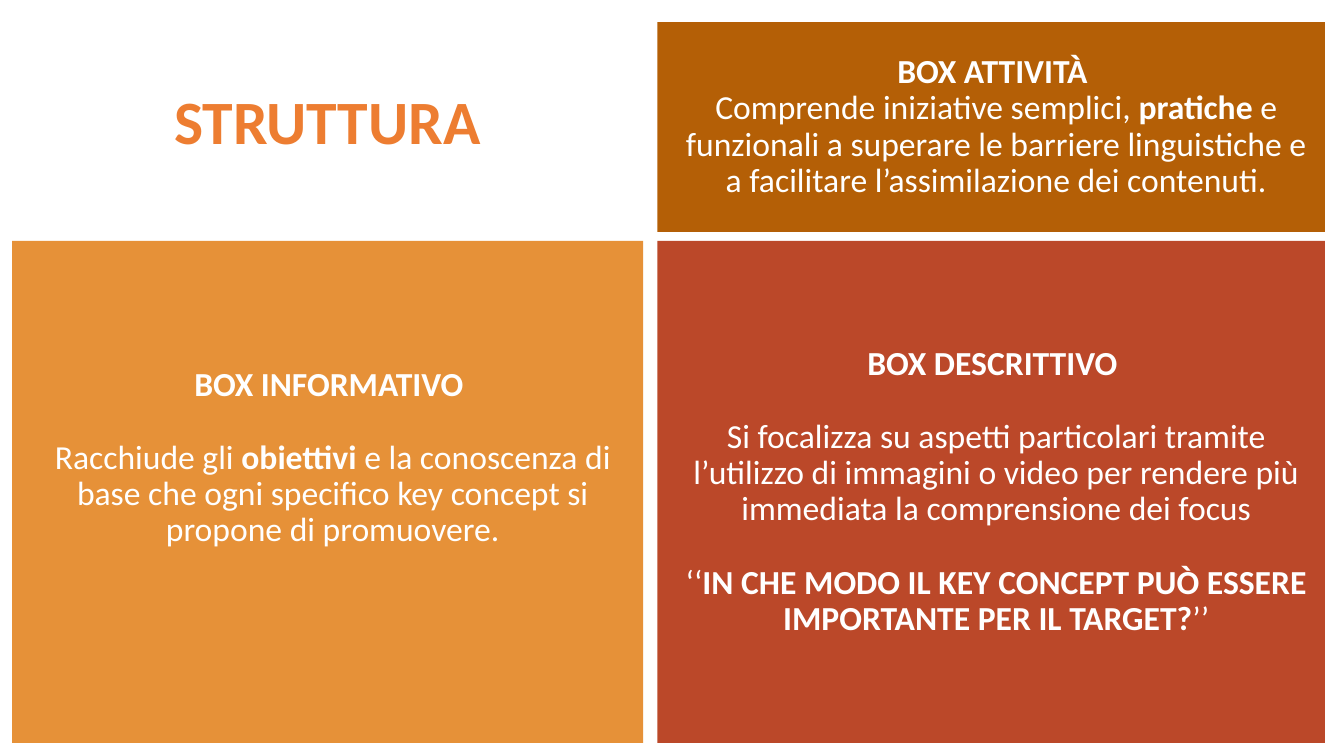
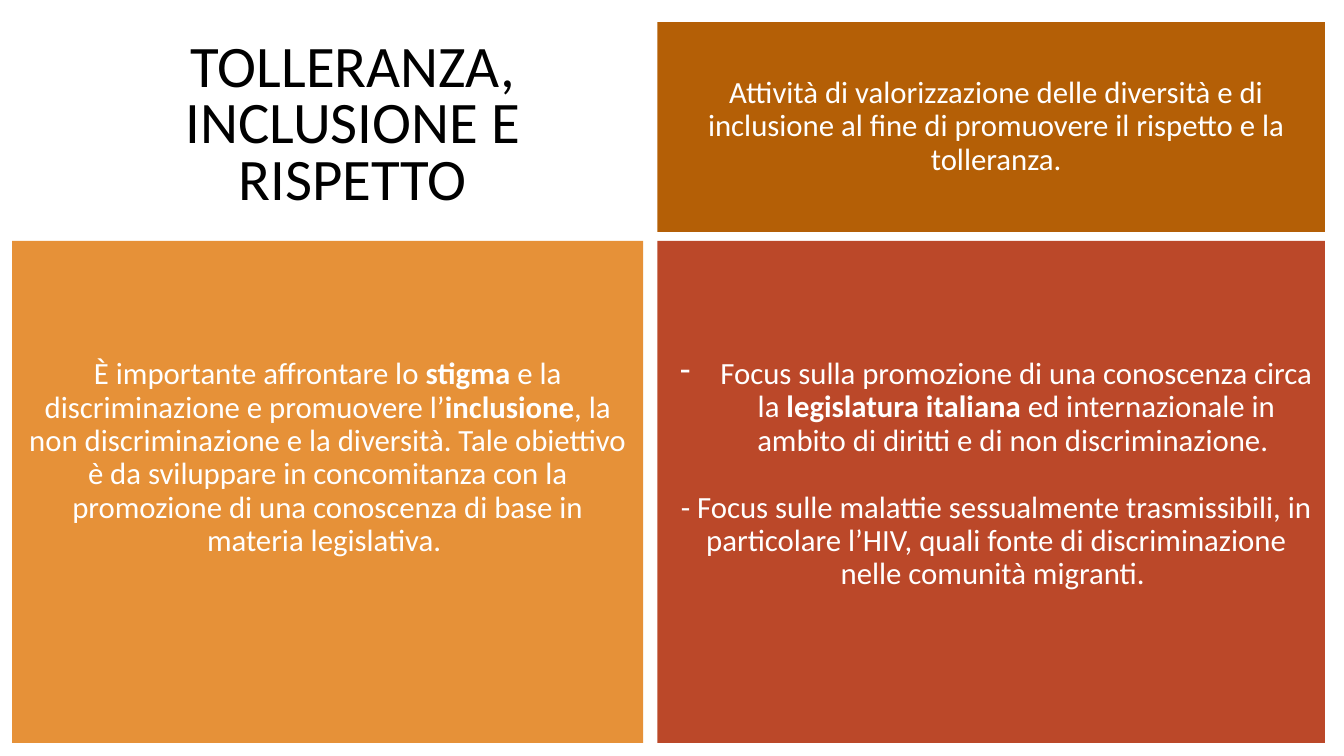
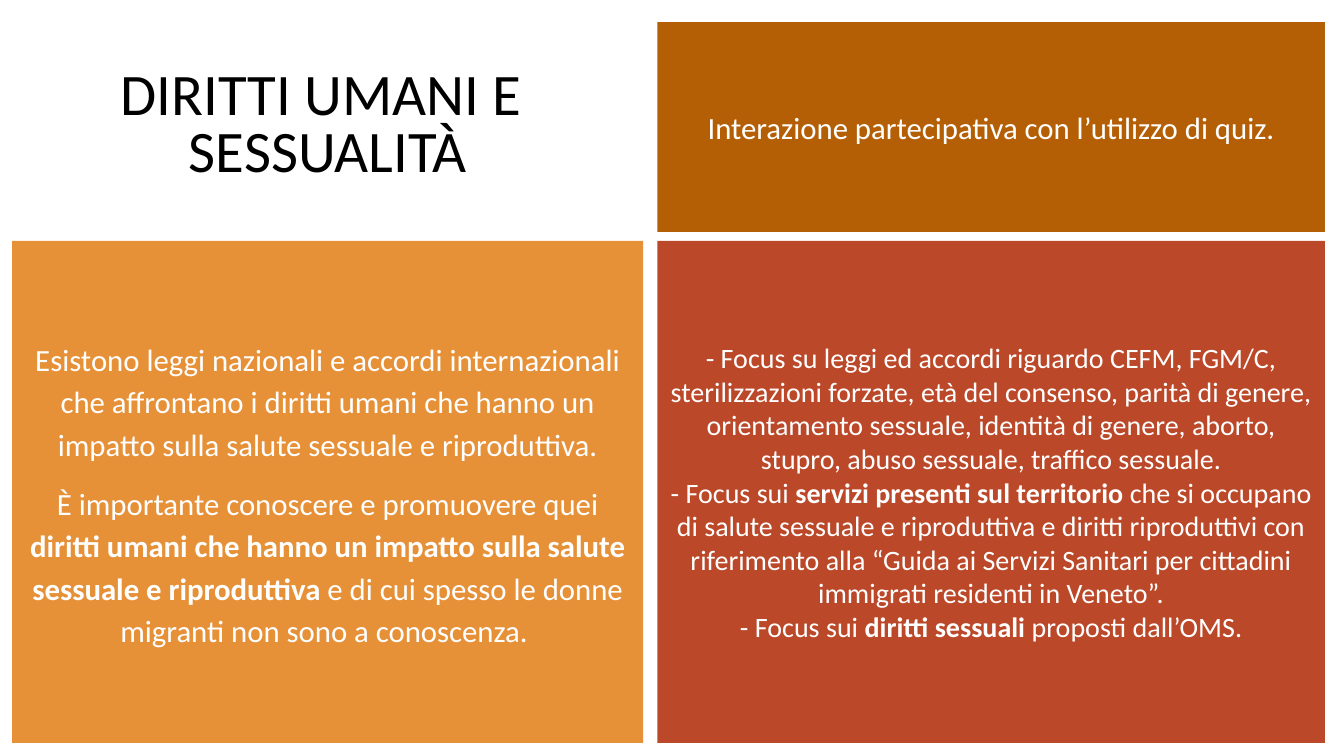
"""Build three slides that pair a title with three coloured text boxes."""
from dataclasses import dataclass, field

import lxml.etree
import pptx
import pptx.dml.color
import pptx.enum.dml
import pptx.enum.shapes
import pptx.enum.text
import pptx.oxml.ns
import pptx.util

Inches = pptx.util.Inches
Pt = pptx.util.Pt
qn = pptx.oxml.ns.qn


@dataclass(frozen=True)
class Theme:
    font: str = "Calibri"
    white: str = "FFFFFF"
    black: str = "000000"
    accent: str = "ED7D31"
    heading: int = 44
    title: int = 42
    large: int = 24
    body: int = 22
    small: int = 20
    inset: float = 0.1


@dataclass(frozen=True)
class Area:
    left: float
    top: float
    width: float
    height: float


@dataclass(frozen=True)
class Tile:
    area: Area
    fill: str
    opacity: int = 100


@dataclass(frozen=True)
class Par:
    text: str
    before: float = 0
    margin: float = 0.1
    hanging: float = 0
    bullet: str = ""


@dataclass(frozen=True)
class Body:
    pars: list[Par]
    size: int
    spacing: float = 0.9
    lift: float = 0


@dataclass(frozen=True)
class Page:
    title: list[str]
    informative: Body
    descriptive: Body
    activity: Body
    title_size: int = field(default=42)
    title_color: str = "000000"
    title_bold: bool = False
    title_margin: float = 0


THEME = Theme()
LEFT, TOP = 0.12, 0.22
LEFT_WIDTH, RIGHT_WIDTH = 6.26, 6.62
UPPER_HEIGHT, LOWER_HEIGHT = 2.08, 4.98
RIGHT = LEFT + LEFT_WIDTH + 0.14
LOWER = TOP + UPPER_HEIGHT + 0.09

TITLE_AREA = Area(LEFT, TOP, LEFT_WIDTH, UPPER_HEIGHT)
ACTIVITY = Tile(Area(RIGHT, TOP, RIGHT_WIDTH, UPPER_HEIGHT), "B45F06")
INFORMATIVE = Tile(Area(LEFT, LOWER, LEFT_WIDTH, LOWER_HEIGHT), "E69138")
DESCRIPTIVE = Tile(Area(RIGHT, LOWER, RIGHT_WIDTH, LOWER_HEIGHT), "B43512", 90)
LARGE_GAP, BODY_GAP = 26.4, 24.2

PAGES = [
    Page(
        title=["STRUTTURA"],
        title_size=THEME.heading,
        title_color=THEME.accent,
        title_bold=True,
        informative=Body(
            [
                Par("**BOX INFORMATIVO **"),
                Par("Racchiude gli **obiettivi** e la conoscenza di base che ogni "
                    "specifico key concept si propone di promuovere.", LARGE_GAP),
            ],
            THEME.large,
            lift=0.67,
        ),
        descriptive=Body(
            [
                Par("**BOX DESCRITTIVO **"),
                Par("Si focalizza su aspetti particolari tramite l’utilizzo di immagini "
                    "o video per rendere più immediata la comprensione dei focus", LARGE_GAP),
                Par("‘‘**IN CHE MODO IL KEY CONCEPT PUÒ ESSERE IMPORTANTE PER IL "
                    "TARGET?**’’", LARGE_GAP),
            ],
            THEME.large,
        ),
        activity=Body(
            [
                Par("**BOX ATTIVITÀ **"),
                Par("Comprende iniziative semplici, **pratiche **e funzionali a superare "
                    "le barriere linguistiche e a facilitare l’assimilazione dei contenuti."),
            ],
            THEME.large,
        ),
    ),
    Page(
        title=["TOLLERANZA, INCLUSIONE E RISPETTO"],
        title_margin=0.5,
        informative=Body(
            [
                Par("È importante affrontare lo **stigma** e la discriminazione e "
                    "promuovere l’**inclusione**, la non discriminazione e la diversità. "
                    "Tale obiettivo è da sviluppare in concomitanza con la promozione di "
                    "una conoscenza di base in materia legislativa. ", margin=0),
            ],
            THEME.body,
            lift=0.67,
        ),
        descriptive=Body(
            [
                Par("Focus sulla promozione di una conoscenza circa la **legislatura "
                    "italiana** ed internazionale in ambito di diritti e di non "
                    "discriminazione. ", margin=0.5, hanging=0.4, bullet="-"),
                Par("- Focus sulle malattie sessualmente trasmissibili, in particolare "
                    "l’HIV, quali fonte di discriminazione nelle comunità migranti. ", BODY_GAP),
            ],
            THEME.body,
            lift=0.34,
        ),
        activity=Body(
            [
                Par("Attività di valorizzazione delle diversità e di inclusione al fine "
                    "di promuovere il rispetto e la tolleranza."),
            ],
            THEME.body,
        ),
    ),
    Page(
        title=["DIRITTI UMANI E ", "SESSUALITÀ"],
        informative=Body(
            [
                Par("Esistono leggi nazionali e accordi internazionali che affrontano i "
                    "diritti umani che hanno un impatto sulla salute sessuale e "
                    "riproduttiva.", 12, 0),
                Par("È importante conoscere e promuovere quei **diritti umani che hanno un "
                    "impatto sulla salute sessuale e riproduttiva** e di cui spesso le "
                    "donne migranti non sono a conoscenza. ", 12, 0),
            ],
            THEME.body,
            1.15,
        ),
        descriptive=Body(
            [
                Par("- Focus su leggi ed accordi riguardo CEFM, FGM/C, sterilizzazioni "
                    "forzate, età del consenso, parità di genere, orientamento sessuale, "
                    "identità di genere, aborto, stupro, abuso sessuale, traffico "
                    "sessuale.", margin=0),
                Par("- Focus sui **servizi presenti sul territorio** che si occupano di "
                    "salute sessuale e riproduttiva e diritti riproduttivi con riferimento "
                    "alla “Guida ai Servizi Sanitari per cittadini immigrati residenti in "
                    "Veneto”.", margin=0),
                Par("- Focus sui **diritti sessuali **proposti dall’OMS.", margin=0),
            ],
            THEME.small,
            1.0,
        ),
        activity=Body(
            [Par("Interazione partecipativa con l’utilizzo di quiz.", margin=0)],
            THEME.body,
            1.0,
        ),
    ),
]


def rgb(color: str) -> pptx.dml.color.RGBColor:
    return pptx.dml.color.RGBColor.from_string(color)


def write(frame, body: Body, color: str, inset_y: float) -> None:
    frame.word_wrap = True
    frame.auto_size = pptx.enum.text.MSO_AUTO_SIZE.NONE
    frame.vertical_anchor = pptx.enum.text.MSO_ANCHOR.MIDDLE
    frame.margin_left = frame.margin_right = Inches(THEME.inset)
    frame.margin_top = Inches(inset_y)
    frame.margin_bottom = Inches(inset_y + body.lift)
    for index, par in enumerate(body.pars):
        paragraph = frame.add_paragraph() if index else frame.paragraphs[0]
        paragraph.alignment = pptx.enum.text.PP_ALIGN.CENTER
        paragraph.line_spacing = body.spacing
        paragraph.space_before = Pt(par.before)
        properties = paragraph._p.get_or_add_pPr()
        properties.set("marL", str(Inches(par.margin)))
        properties.set("indent", str(-Inches(par.hanging)))
        if par.bullet:
            lxml.etree.SubElement(properties, qn("a:buChar"), char=par.bullet)
        paragraph.font.name = THEME.font
        paragraph.font.size = Pt(body.size)
        paragraph.font.color.rgb = rgb(color)
        for part, text in enumerate(par.text.split("**")):
            if text:
                run = paragraph.add_run()
                run.text = text
                run.font.bold = part % 2 == 1


def place(area: Area) -> tuple[int, int, int, int]:
    return Inches(area.left), Inches(area.top), Inches(area.width), Inches(area.height)


def draw_title(slide, page: Page) -> None:
    title = slide.shapes.title
    title.left, title.top, title.width, title.height = place(TITLE_AREA)
    mark = "**" if page.title_bold else ""
    lines = [Par(mark + line + mark, margin=page.title_margin) for line in page.title]
    write(title.text_frame, Body(lines, page.title_size, 0.8), page.title_color, 0.05)


def draw_tile(slide, tile: Tile, body: Body) -> None:
    box = slide.shapes.add_shape(pptx.enum.shapes.MSO_SHAPE.RECTANGLE, *place(tile.area))
    box.shadow.inherit = False
    box.line.fill.background()
    box.fill.solid()
    box.fill.fore_color.rgb = rgb(tile.fill)
    if tile.opacity < 100:
        tint = box._element.spPr.find(qn("a:solidFill")).find(qn("a:srgbClr"))
        lxml.etree.SubElement(tint, qn("a:alpha"), val=str(tile.opacity * 1000))
    write(box.text_frame, body, THEME.white, THEME.inset)


def main() -> None:
    deck = pptx.Presentation()
    deck.slide_width, deck.slide_height = Inches(13.33), Inches(7.5)
    title_only = deck.slide_layouts.get_by_name("Title Only")
    for page in PAGES:
        slide = deck.slides.add_slide(title_only)
        draw_title(slide, page)
        draw_tile(slide, ACTIVITY, page.activity)
        draw_tile(slide, INFORMATIVE, page.informative)
        draw_tile(slide, DESCRIPTIVE, page.descriptive)
    deck.save("out.pptx")


if __name__ == "__main__":
    main()
